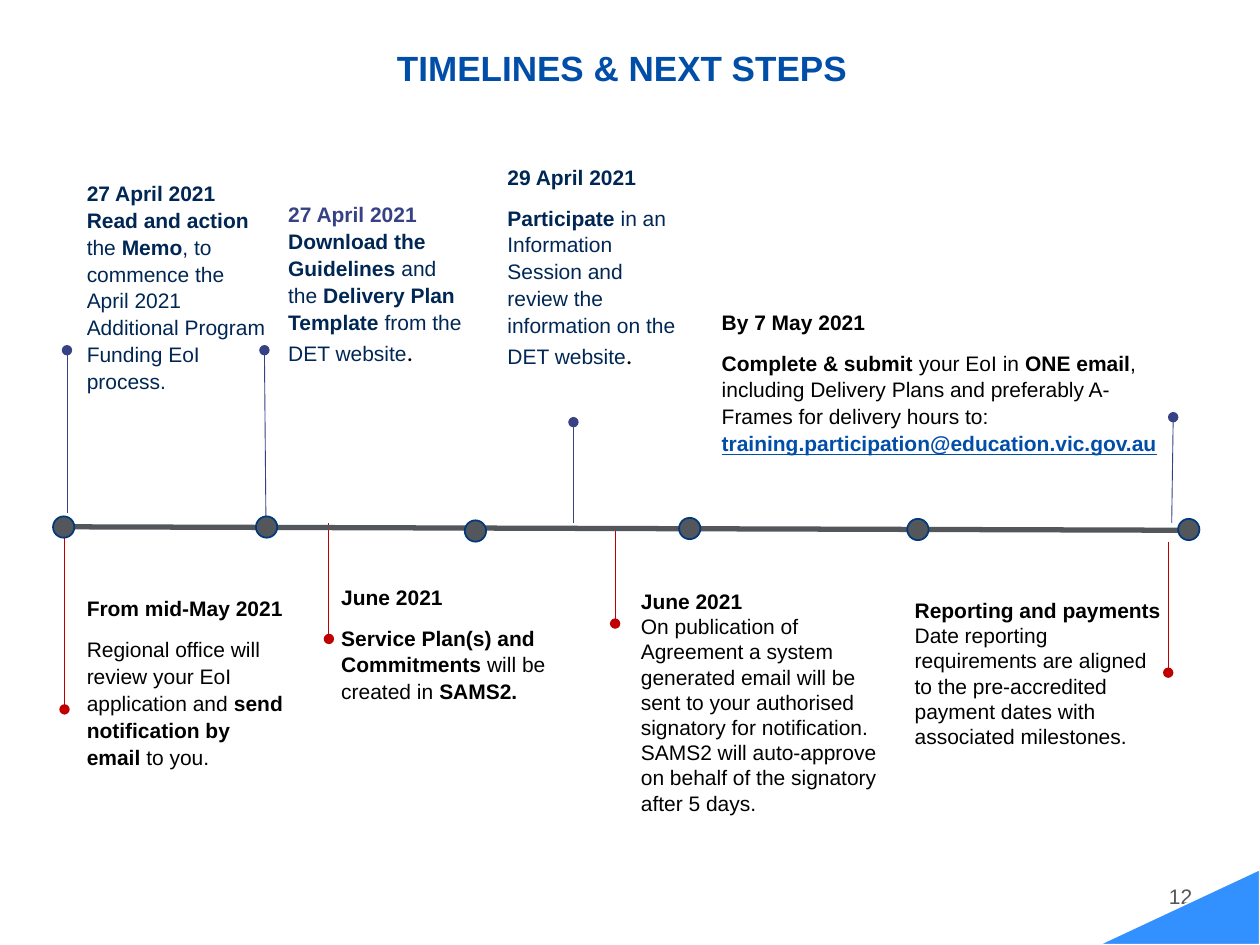
from lxml import etree
from pptx import Presentation
from pptx import util as u
from pptx.dml.color import RGBColor
from pptx.enum import shapes, text
from pptx.oxml.ns import qn

Cm, Pt = u.Cm, u.Pt
FONT = "Arial"
NAVY, INDIGO, BLUE, RED = "002754", "364283", "004EA8", "C00000"
GREY, BLACK, WHITE, SKY, RIM = "53565A", "000000", "FFFFFF", "3291FF", "003A7C"

# Run styles
BOLD, PLAIN = {"bold": True}, {"bold": False}
LINK = {"bold": True, "color": BLUE, "underline": True}
STOP = {"bold": False, "color": BLACK, "name": "Calibri", "size": 14}

TITLE = "TIMELINES & NEXT STEPS"
PAGE = "12"

# Each step: box (cm), date, date colour, body colour, layout, body runs.
# "spaced" sets the date apart; "joined" spaces only the body; "tight" neither.
ABOVE = [
    ((1.5, 3.51, 4.11, 4.57), "27 April 2021", NAVY, NAVY, "joined",
     [("Read and action ", BOLD), ("the ", PLAIN), ("Memo", BOLD),
      (", to commence the April 2021 Additional Program Funding EoI process.", PLAIN)]),
    ((5.56, 3.94, 4.11, 3.58), "27 April 2021", INDIGO, NAVY, "joined",
     [("Download the Guidelines ", BOLD), ("and the ", PLAIN),
      ("Delivery Plan Template ", BOLD), ("from the DET website", PLAIN), (".", STOP)]),
    ((9.98, 3.15, 4.14, 4.45), "29 April 2021", NAVY, NAVY, "spaced",
     [("Participate", BOLD),
      (" in an Information Session and review the information on the DET website", PLAIN),
      (".", STOP)]),
]
BELOW = [
    ((14.3, 6.07, 9.4, 3.25), "By 7 May 2021", BLACK, BLACK, "spaced",
     [("Complete & submit ", BOLD), ("your EoI in ", PLAIN), ("ONE email", BOLD),
      (", including Delivery Plans and preferably A-Frames for delivery hours to: ", PLAIN),
      ("training.participation@education.vic.gov.au", LINK)]),
    ((1.5, 11.86, 4.55, 3.78), "From mid-May 2021", BLACK, BLACK, "spaced",
     [("Regional office will review your EoI application and ", PLAIN),
      ("send notification by email ", BOLD), ("to you.", PLAIN)]),
    ((6.63, 11.63, 5.74, 2.69), "June 2021", BLACK, BLACK, "spaced",
     [("Service Plan(s) and Commitments ", BOLD), ("will be created in", PLAIN),
      (" SAMS2.", BOLD)]),
    ((12.67, 11.68, 5.44, 4.88), "June 2021", BLACK, BLACK, "tight",
     [("On publication of Agreement a system generated email will be sent to your "
       "authorised signatory for notification. SAMS2 will auto-approve on behalf of "
       "the signatory after 5 days.", PLAIN)]),
    ((18.19, 11.89, 5.61, 3.33), "Reporting and payments", BLACK, BLACK, "tight",
     [("Date reporting requirements are aligned to the pre-accredited payment dates "
       "with associated milestones.", PLAIN)]),
]

# Timeline geometry (cm): stems run from the axis to their dotted end
AXIS = (1.14, 10.62, 24.13, 10.69)
NODE = 0.43
NODES = [(1.07, 10.41), (5.16, 10.41), (9.37, 10.49),
         (13.69, 10.44), (18.29, 10.46), (23.75, 10.46)]
STEMS = {
    INDIGO: [(1.35, 10.34, 1.35, 7.06), (5.36, 10.41, 5.33, 7.06),
             (11.56, 10.54, 11.56, 8.51), (23.62, 10.54, 23.65, 8.41)],
    RED: [(1.3, 10.85, 1.3, 14.3), (6.63, 10.54, 6.63, 12.88),
          (12.4, 10.67, 12.4, 12.57), (23.55, 10.92, 23.55, 13.56)],
}


def rgb(hex_value):
    return RGBColor.from_string(hex_value)


def style(font, size=12, color=None, bold=None, name=FONT, underline=None):
    font.name, font.size = name, Pt(size)
    font.bold, font.underline = bold, underline
    if color:
        font.color.rgb = rgb(color)


def add_line(slide, ends, color, width, dotted=False):
    line = slide.shapes.add_connector(shapes.MSO_CONNECTOR.STRAIGHT, *map(Cm, ends))
    line.line.color.rgb = rgb(color)
    line.line.width = Pt(width)
    if dotted:
        etree.SubElement(line.line._get_or_add_ln(), qn("a:tailEnd"), type="oval")
    etree.SubElement(line._element.spPr, qn("a:effectLst"))


def add_figure(slide, kind, box, fill, outline):
    figure = slide.shapes.add_shape(kind, *map(Cm, box))
    figure.shadow.inherit = False
    figure.fill.solid()
    figure.fill.fore_color.rgb = rgb(fill)
    figure.line.color.rgb = rgb(outline)
    figure.line.width = Pt(1)
    return figure


def add_step(slide, step, anchor):
    box, date, date_color, body_color, layout, runs = step
    frame = slide.shapes.add_textbox(*map(Cm, box)).text_frame
    frame.word_wrap = True
    frame.auto_size = text.MSO_AUTO_SIZE.SHAPE_TO_FIT_TEXT
    frame.vertical_anchor = anchor
    heading, body = frame.paragraphs[0], frame.add_paragraph()
    heading.text = date
    style(heading.font, color=date_color, bold=True)
    for words, look in runs:
        run = body.add_run()
        run.text = words
        style(run.font, **{"color": body_color, **look})
    spaced = {"spaced": [heading, body], "joined": [body], "tight": []}[layout]
    for paragraph in spaced:
        paragraph.line_spacing = 1.07
        paragraph.space_after = Pt(8)


def main():
    prs = Presentation()
    prs.slide_width, prs.slide_height = Cm(25.4), Cm(19.05)
    slide = prs.slides.add_slide(prs.slide_layouts[5])

    # Title
    title = slide.shapes.title
    title.left, title.top, title.width, title.height = map(Cm, (0.79, 1.04, 23.5, 1.42))
    frame = title.text_frame
    frame.text = TITLE
    frame.auto_size = text.MSO_AUTO_SIZE.NONE
    frame.vertical_anchor = text.MSO_ANCHOR.TOP
    frame.margin_left = frame.margin_right = frame.margin_top = frame.margin_bottom = 0
    heading = frame.paragraphs[0]
    heading.alignment = text.PP_ALIGN.CENTER
    heading.line_spacing = 0.9
    style(heading.font, 20, BLUE, True)

    # Page number and corner
    frame = slide.shapes.add_textbox(*map(Cm, (23.19, 17.55, 1.22, 1.02))).text_frame
    frame.word_wrap = True
    frame.vertical_anchor = text.MSO_ANCHOR.MIDDLE
    number = frame.paragraphs[0]
    number.text = PAGE
    number.alignment = text.PP_ALIGN.CENTER
    style(number.font, color=GREY)
    corner = add_figure(slide, shapes.MSO_SHAPE.RIGHT_TRIANGLE,
                        (23.01, 16.66, 1.52, 3.25), SKY, WHITE)
    corner.rotation = 270

    # Timeline: stems, axis, nodes
    for color, stems in STEMS.items():
        for ends in stems:
            add_line(slide, ends, color, 0.5, dotted=True)
    add_line(slide, AXIS, GREY, 3)
    for left, top in NODES:
        add_figure(slide, shapes.MSO_SHAPE.OVAL, (left, top, NODE, NODE), GREY, RIM)

    # Steps
    for steps, anchor in ((ABOVE, text.MSO_ANCHOR.TOP), (BELOW, text.MSO_ANCHOR.BOTTOM)):
        for step in steps:
            add_step(slide, step, anchor)

    prs.save("out.pptx")


if __name__ == "__main__":
    main()
